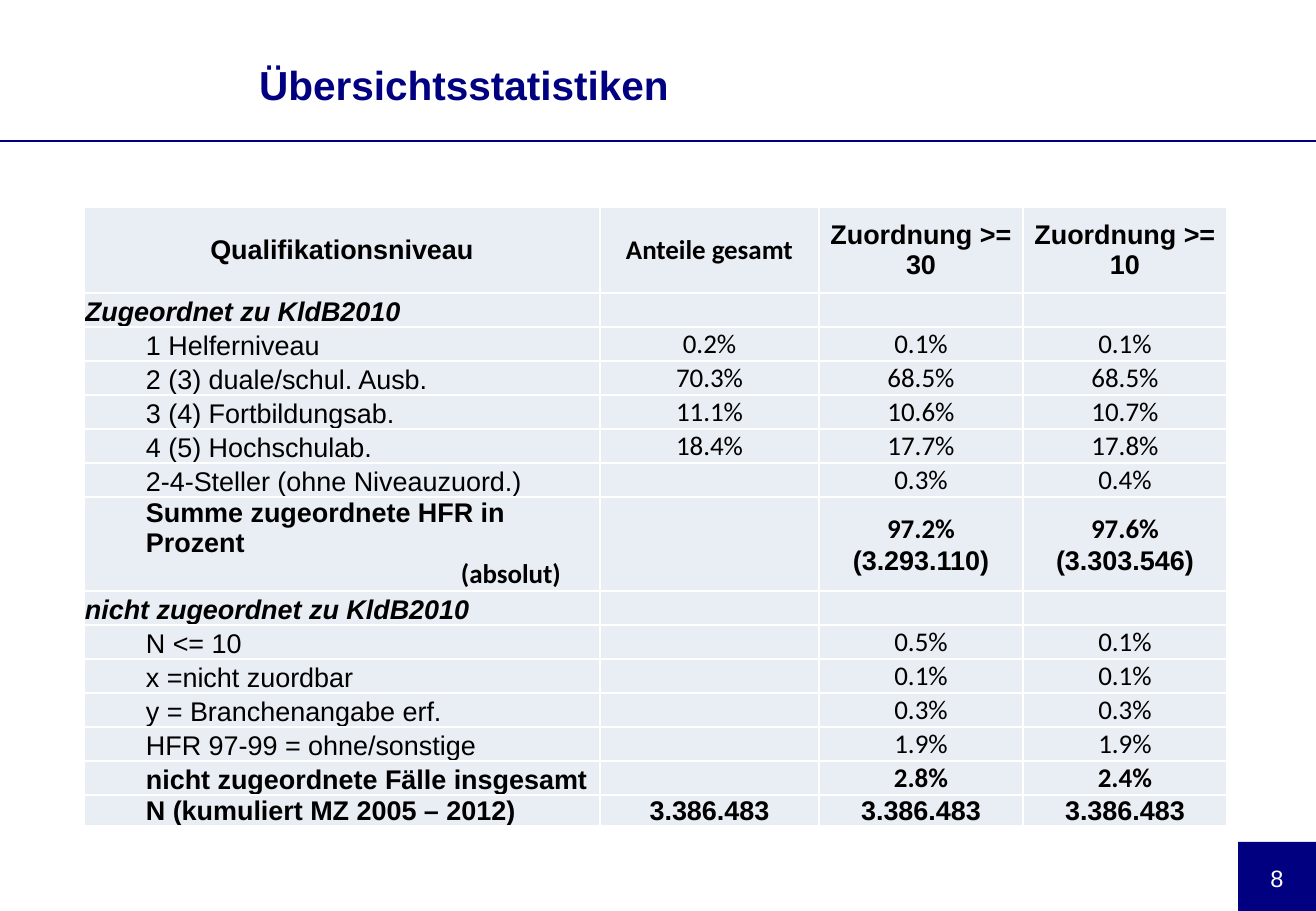
from lxml import etree
from pptx import Presentation
from pptx import util as u
from pptx.dml.color import RGBColor
from pptx.enum import shapes, text
from pptx.oxml import ns

NAVY = RGBColor(0x00, 0x00, 0x80)
WHITE = RGBColor(0xFF, 0xFF, 0xFF)
BLACK = RGBColor(0x00, 0x00, 0x00)
PALE = RGBColor(0xE9, 0xED, 0xF4)

COLUMN_WIDTHS = [516, 219, 204, 204]
ROW_HEIGHTS = {"head": 86, "group": 34, "item": 34, "sum": 34, "total": 94, "count": 31}
CALIBRI_WORDS = ("Anteile gesamt", "(absolut)")
ROWS = [
    ("head", "Qualifikationsniveau", "Anteile gesamt", "Zuordnung >= 30", "Zuordnung >= 10"),
    ("group", "Zugeordnet zu KldB2010", "", "", ""),
    ("item", "1 Helferniveau", "0.2%", "0.1%", "0.1%"),
    ("item", "2 (3) duale/schul. Ausb.", "70.3%", "68.5%", "68.5%"),
    ("item", "3 (4) Fortbildungsab.", "11.1%", "10.6%", "10.7%"),
    ("item", "4 (5) Hochschulab.", "18.4%", "17.7%", "17.8%"),
    ("item", "2-4-Steller (ohne Niveauzuord.)", "", "0.3%", "0.4%"),
    ("total", "Summe zugeordnete HFR in Prozent\n(absolut)", "",
     "97.2%\n(3.293.110)", "97.6%\n(3.303.546)"),
    ("group", "nicht zugeordnet zu KldB2010", "", "", ""),
    ("item", "N <= 10", "", "0.5%", "0.1%"),
    ("item", "x =nicht zuordbar", "", "0.1%", "0.1%"),
    ("item", "y = Branchenangabe erf.", "", "0.3%", "0.3%"),
    ("item", "HFR 97-99 = ohne/sonstige", "", "1.9%", "1.9%"),
    ("sum", "nicht zugeordnete Fälle insgesamt", "", "2.8%", "2.4%"),
    ("count", "N (kumuliert MZ 2005 – 2012)", "3.386.483", "3.386.483", "3.386.483"),
]


def px(length):
    return u.Emu(round(length * 914400 / 121.5))


class StatisticsSlide:
    def __init__(self, deck):
        self.page = deck.slides.add_slide(deck.slide_layouts[5])

    def style(self, para, size, color, align, name="Arial", bold=False, italic=False):
        para.alignment = align
        font = para.font
        font.name, font.size, font.bold, font.italic = name, u.Pt(size), bold, italic
        font.color.rgb = color

    def title(self, words, left, top, width, height):
        box = self.page.shapes.title
        box.left, box.top, box.width, box.height = map(px, (left, top, width, height))
        frame = box.text_frame
        frame.text = words
        frame.auto_size = text.MSO_AUTO_SIZE.NONE
        frame.vertical_anchor = text.MSO_ANCHOR.MIDDLE
        self.style(frame.paragraphs[0], 24, NAVY, text.PP_ALIGN.LEFT, bold=True)

    def rule(self, y, width):
        line = self.page.shapes.add_connector(
            shapes.MSO_CONNECTOR.STRAIGHT, px(width), px(y), 0, px(y))
        line.line.color.rgb = NAVY
        line.line.width = u.Pt(1.5)
        etree.SubElement(line._element.spPr, ns.qn("a:effectLst"))

    def number(self, words, left, top, width, height):
        box = self.page.shapes.add_shape(
            shapes.MSO_SHAPE.RECTANGLE, *map(px, (left, top, width, height)))
        box.shadow.inherit = False
        box.fill.solid()
        box.fill.fore_color.rgb = NAVY
        box.line.fill.background()
        box.text_frame.text = words
        box.text_frame.vertical_anchor = text.MSO_ANCHOR.MIDDLE
        self.style(box.text_frame.paragraphs[0], 14, WHITE, text.PP_ALIGN.CENTER)

    def borders(self, cell):
        properties = cell._tc.get_or_add_tcPr()
        for side in ("lnL", "lnR", "lnT", "lnB"):
            edge = etree.SubElement(properties, ns.qn(f"a:{side}"), w=str(u.Pt(1)))
            fill = etree.SubElement(edge, ns.qn("a:solidFill"))
            etree.SubElement(fill, ns.qn("a:srgbClr"), val=str(WHITE))

    def cell(self, cell, kind, words, is_label):
        self.borders(cell)
        cell.fill.solid()
        cell.fill.fore_color.rgb = PALE
        cell.margin_left = cell.margin_right = cell.margin_top = px(1)
        cell.margin_bottom = 0
        low = kind == "count" or (is_label and kind != "head")
        cell.vertical_anchor = text.MSO_ANCHOR.BOTTOM if low else text.MSO_ANCHOR.MIDDLE
        cell.text_frame.text = words
        centred = kind == "head" or not is_label
        align = text.PP_ALIGN.CENTER if centred else text.PP_ALIGN.LEFT
        for para in cell.text_frame.paragraphs:
            if not para.text:
                etree.SubElement(para._p, ns.qn("a:endParaRPr"), sz="1600")
            elif is_label and kind not in ("head", "group"):
                indent = 376 if para.text == "(absolut)" else 61
                para._p.get_or_add_pPr().set("marL", str(px(indent)))
            calibri = para.text.endswith("%") or para.text in CALIBRI_WORDS
            self.style(para, 16, BLACK, align, "Calibri" if calibri else "Arial",
                       bold=kind != "item", italic=kind == "group")

    def table(self, rows, left, top):
        heights = [ROW_HEIGHTS[row[0]] for row in rows]
        table = self.page.shapes.add_table(
            len(rows), len(COLUMN_WIDTHS), px(left), px(top),
            px(sum(COLUMN_WIDTHS)), px(sum(heights))).table
        table.first_row = table.horz_banding = False
        for column, width in zip(table.columns, COLUMN_WIDTHS):
            column.width = px(width)
        for line, height, (kind, *entries) in zip(table.rows, heights, rows):
            line.height = px(height)
            for index, words in enumerate(entries):
                self.cell(line.cells[index], kind, words, index == 0)


def main():
    deck = Presentation()
    deck.slide_width, deck.slide_height = px(1316), px(911)
    slide = StatisticsSlide(deck)
    slide.number("8", 1238, 842, 78, 72)
    slide.rule(141, 1316)
    slide.title("Übersichtsstatistiken", 247, 36, 842, 96)
    slide.table(ROWS, 84, 207)
    deck.save("out.pptx")


if __name__ == "__main__":
    main()
